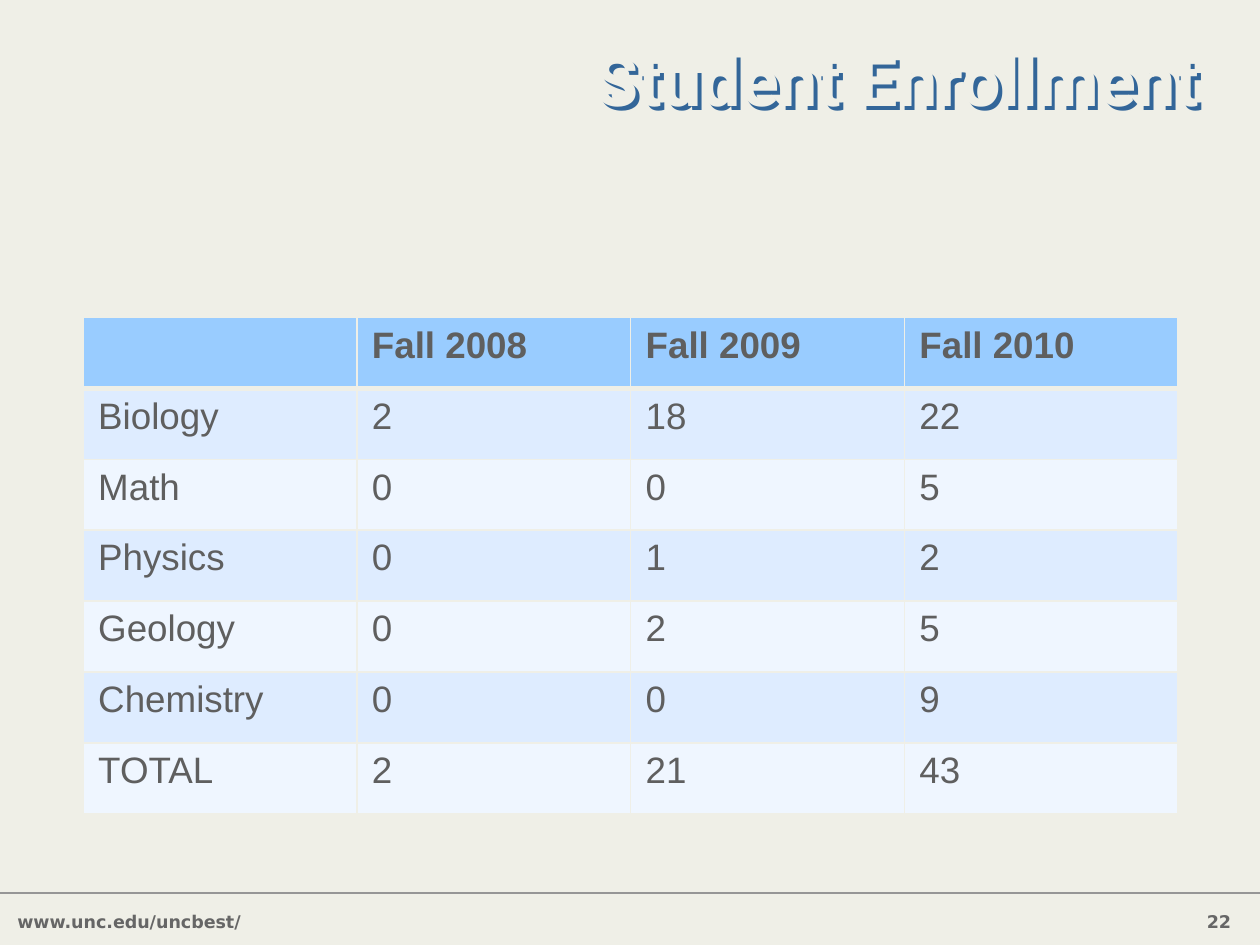
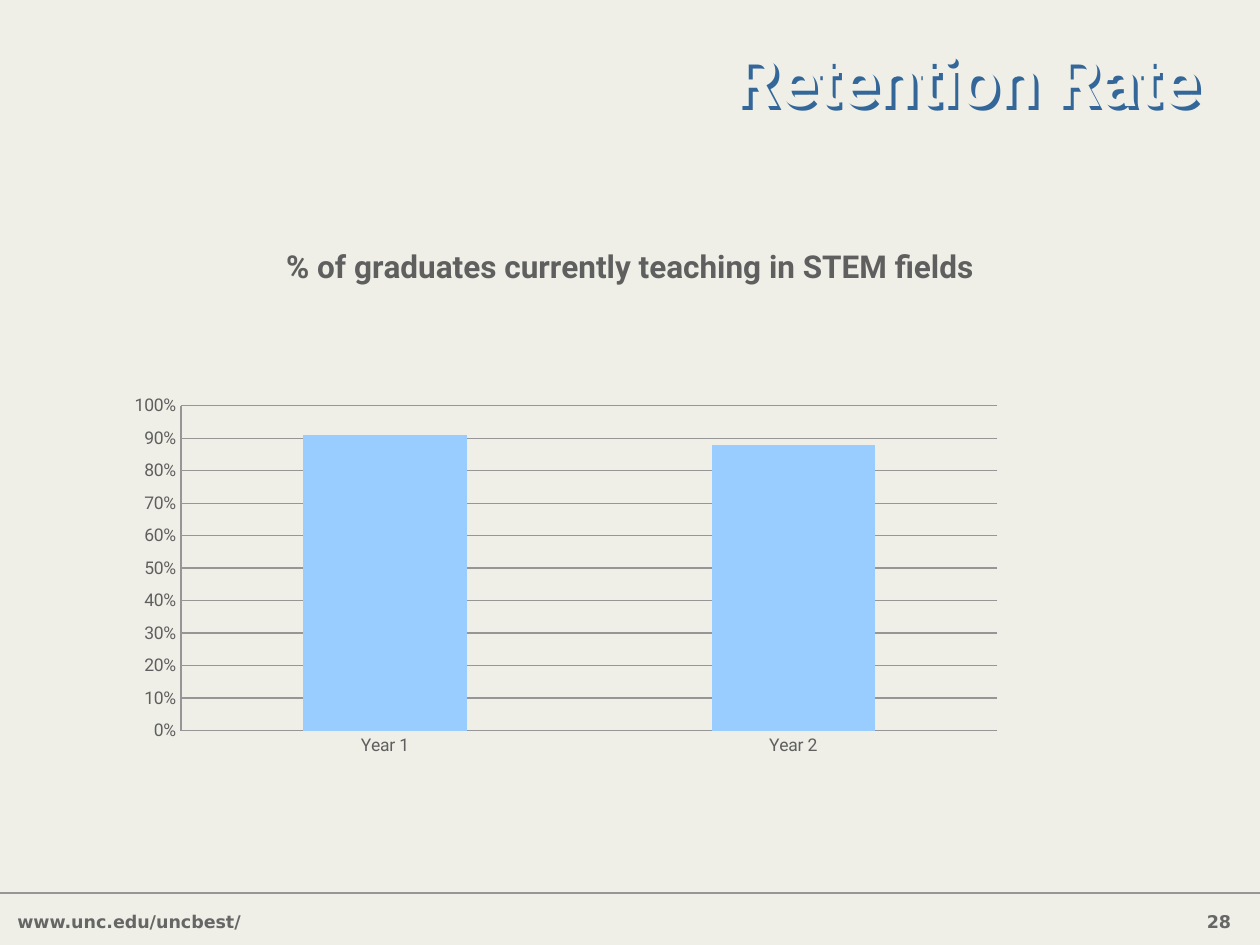
from dataclasses import dataclass

from lxml import etree
from pptx import Presentation
from pptx import util as u
from pptx.chart.data import CategoryChartData
from pptx.dml.color import RGBColor
from pptx.enum import chart as charts, shapes, text
from pptx.oxml import ns, parse_xml

FOOTER = "www.unc.edu/uncbest/"
ENROLLMENT = {
    "title": "Student Enrollment",
    "number": 22,
    "rows": [
        ("", "Fall 2008", "Fall 2009", "Fall 2010"),
        ("Biology", 2, 18, 22),
        ("Math", 0, 0, 5),
        ("Physics", 0, 1, 2),
        ("Geology", 0, 2, 5),
        ("Chemistry", 0, 0, 9),
        ("TOTAL", 2, 21, 43),
    ],
}
RETENTION = {
    "title": "Retention Rate",
    "number": 28,
    "chart_title": "% of graduates currently teaching in STEM fields",
    "categories": ["Year 1", "Year 2"],
    "values": [0.91, 0.88],
}


@dataclass(frozen=True)
class Theme:
    background: str = "EFEFE7"
    title_shadow: str = "336699"
    body: str = "5F5F5F"
    footer: str = "666666"
    rule: str = "969696"
    accent: str = "99CCFF"
    bands: tuple = ("EFF6FF", "DEECFF")
    title_font: str = "Roboto"
    table_font: str = "Arial"
    footer_font: str = "DejaVu Sans"
    title_size: int = 40
    chart_title_size: int = 18
    table_size: int = 21
    small_size: int = 10


THEME = Theme()


def color(value):
    return RGBColor.from_string(value)


def style_font(font, name, size, value, bold=False):
    font.name = name
    font.size = u.Pt(size)
    font.color.rgb = color(value)
    font.bold = bold


def style_line(line, width=0.75):
    line.color.rgb = color(THEME.rule)
    line.width = u.Pt(width)


def add_text(slide, content, box, name, size, value):
    shape = slide.shapes.add_textbox(*map(u.Inches, box))
    shape.text_frame.word_wrap = True
    paragraph = shape.text_frame.paragraphs[0]
    paragraph.text = content
    style_font(paragraph.font, name, size, value, True)
    return shape


def add_title(slide, title):
    shape = add_text(slide, title, (2.46, 0.05, 7.16, 1.25),
                     THEME.title_font, THEME.title_size, THEME.background)
    shape.text_frame.vertical_anchor = text.MSO_ANCHOR.MIDDLE
    paragraph = shape.text_frame.paragraphs[0]
    paragraph.alignment = text.PP_ALIGN.RIGHT
    paragraph.line_spacing = 0.85
    shape._element.spPr.append(parse_xml(
        f'<a:effectLst {ns.nsdecls("a")}>'
        f'<a:outerShdw dist="{u.Inches(0.04)}" dir="2700000" algn="ctr" rotWithShape="0">'
        f'<a:srgbClr val="{THEME.title_shadow}"/></a:outerShdw></a:effectLst>'))


def add_slide(presentation, content):
    slide = presentation.slides.add_slide(presentation.slide_layouts[6])
    slide.background.fill.solid()
    slide.background.fill.fore_color.rgb = color(THEME.background)
    rule = slide.shapes.add_connector(
        shapes.MSO_CONNECTOR.STRAIGHT, 0, u.Inches(7.09),
        presentation.slide_width, u.Inches(7.09))
    style_line(rule.line, 1)
    etree.SubElement(rule._element.spPr, ns.qn("a:effectLst"))
    for label, left, width in ((FOOTER, 0.04, 2.5), (str(content["number"]), 9.48, 0.51)):
        add_text(slide, label, (left, 7.18, width, 0.25),
                 THEME.footer_font, THEME.small_size, THEME.footer)
    add_title(slide, content["title"])
    return slide


def set_borders(cell, bottom_width):
    properties = cell._tc.get_or_add_tcPr()
    for side, width in (("L", 1), ("R", 1), ("T", 1), ("B", bottom_width)):
        properties.append(parse_xml(
            f'<a:ln{side} {ns.nsdecls("a")} w="{u.Pt(width)}"><a:solidFill>'
            f'<a:srgbClr val="{THEME.background}"/></a:solidFill></a:ln{side}>'))


def add_enrollment_table(slide, rows):
    table = slide.shapes.add_table(
        len(rows), len(rows[0]), u.Inches(0.66), u.Inches(2.52),
        u.Inches(8.69), u.Inches(3.94)).table
    for row_index, row in enumerate(rows):
        header = row_index == 0
        for column_index, value in enumerate(row):
            cell = table.cell(row_index, column_index)
            cell.margin_left = cell.margin_right = u.Inches(0.12)
            cell.margin_top = cell.margin_bottom = u.Inches(0.06)
            set_borders(cell, 3 if header else 1)
            cell.fill.solid()
            cell.fill.fore_color.rgb = color(THEME.accent if header else THEME.bands[row_index % 2])
            paragraph = cell.text_frame.paragraphs[0]
            paragraph.text = str(value)
            style_font(paragraph.font, THEME.table_font, THEME.table_size, THEME.body, header)


def set_plot_area(chart, left, top, width, height):
    plot_area = chart._chartSpace.chart.plotArea
    for layout in plot_area.findall(ns.qn("c:layout")):
        plot_area.remove(layout)
    settings = (("layoutTarget", "inner"), ("xMode", "edge"), ("yMode", "edge"),
                ("x", left), ("y", top), ("w", width), ("h", height))
    entries = "".join(f'<c:{tag} val="{value}"/>' for tag, value in settings)
    plot_area.insert(0, parse_xml(
        f'<c:layout {ns.nsdecls("c")}><c:manualLayout>{entries}</c:manualLayout></c:layout>'))


def add_retention_chart(slide, content):
    data = CategoryChartData(number_format="0%")
    data.categories = content["categories"]
    data.add_series("Series 1", content["values"])
    chart = slide.shapes.add_chart(
        charts.XL_CHART_TYPE.COLUMN_CLUSTERED, u.Inches(0.5), u.Inches(1.75),
        u.Inches(9), u.Inches(4.95), data).chart
    style_font(chart.font, THEME.title_font, THEME.small_size, THEME.body)
    chart.has_legend = False
    chart.has_title = True
    chart.chart_title.include_in_layout = False
    paragraph = chart.chart_title.text_frame.paragraphs[0]
    paragraph.text = content["chart_title"]
    style_font(paragraph.font, THEME.title_font, THEME.chart_title_size, THEME.body, True)

    plot = chart.plots[0]
    plot.gap_width = 150
    plot.vary_by_categories = False
    fill = plot.series[0].format.fill
    fill.solid()
    fill.fore_color.rgb = color(THEME.accent)
    for axis in (chart.category_axis, chart.value_axis):
        axis.major_tick_mark = axis.minor_tick_mark = charts.XL_TICK_MARK.NONE
        style_line(axis.format.line)
    axis = chart.value_axis
    axis.minimum_scale, axis.maximum_scale, axis.major_unit = 0, 1, 0.1
    axis.tick_labels.number_format = "0%"
    axis.tick_labels.number_format_is_linked = False
    axis.has_major_gridlines = True
    style_line(axis.major_gridlines.format.line)
    set_plot_area(chart, 0.104, 0.297, 0.72, 0.521)


def main():
    presentation = Presentation()
    presentation.slide_width = u.Inches(10)
    presentation.slide_height = u.Inches(7.5)
    add_enrollment_table(add_slide(presentation, ENROLLMENT), ENROLLMENT["rows"])
    add_retention_chart(add_slide(presentation, RETENTION), RETENTION)
    presentation.save("out.pptx")


if __name__ == "__main__":
    main()
